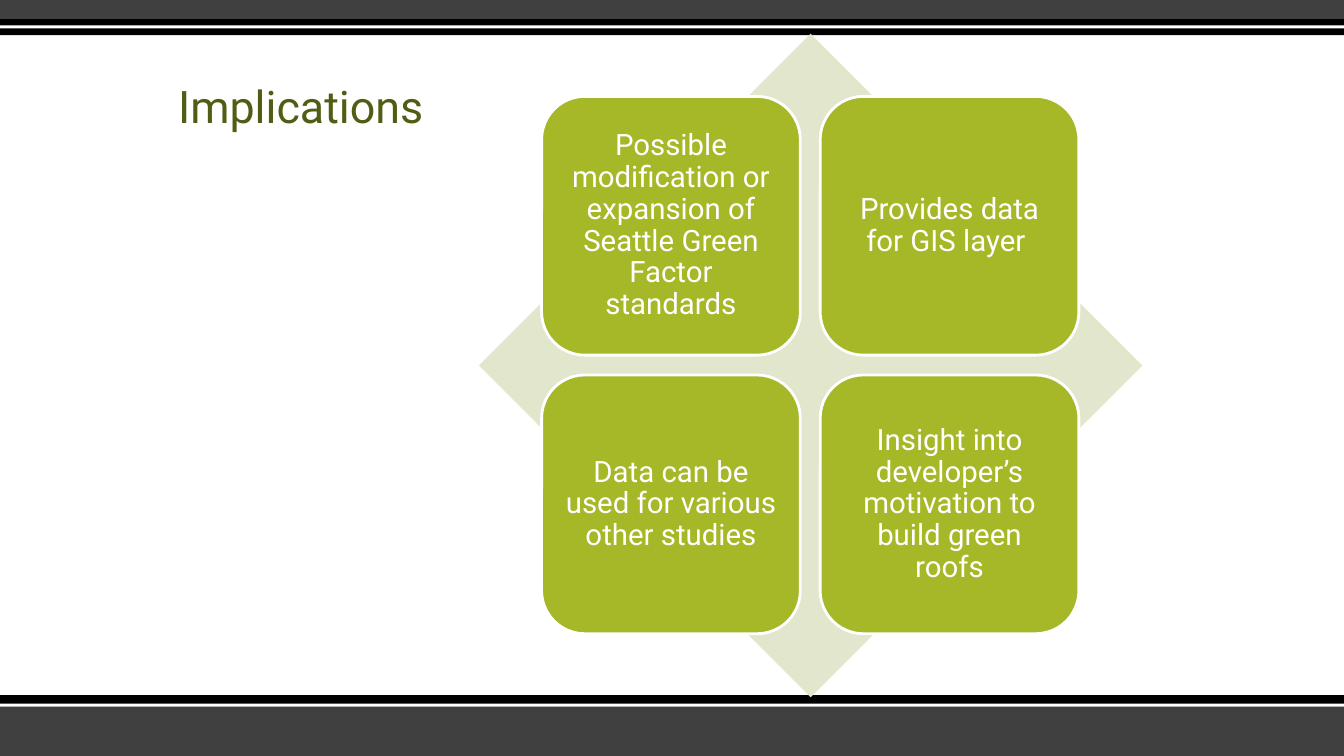
import pptx
import pptx.dml.color
import pptx.enum.shapes
import pptx.enum.text
import pptx.util
from pptx.util import Cm

SHAPES = pptx.enum.shapes.MSO_SHAPE
ANCHOR = pptx.enum.text.MSO_ANCHOR
SLIDE_WIDTH, SLIDE_HEIGHT = 33.87, 19.05

deck = pptx.Presentation()
deck.slide_width, deck.slide_height = Cm(SLIDE_WIDTH), Cm(SLIDE_HEIGHT)
slide = deck.slides.add_slide(deck.slide_layouts[6])


def add_filled(preset, left, top, width, height, color):
    shape = slide.shapes.add_shape(preset, Cm(left), Cm(top), Cm(width), Cm(height))
    shape.shadow.inherit = False
    shape.fill.solid()
    shape.fill.fore_color.rgb = pptx.dml.color.RGBColor.from_string(color)
    shape.line.fill.background()
    return shape


def write(paragraph, text, size, color):
    paragraph.line_spacing = 0.9
    run = paragraph.add_run()
    run.text = text
    run.font.name = "Roboto"
    run.font.size = pptx.util.Pt(size)
    run.font.color.rgb = pptx.dml.color.RGBColor.from_string(color)


# Bands across the bottom and top edges
for top, height, color in [
    (17.78, 1.27, "404040"),
    (17.52, 0.28, "000000"),
    (17.73, 0.08, "FFFFFF"),
    (0, 0.48, "404040"),
    (0.48, 0.41, "000000"),
    (0.64, 0.08, "FFFFFF"),
]:
    add_filled(SHAPES.RECTANGLE, 0, top, SLIDE_WIDTH, height, color)

# Title, with one line of room kept free beneath it
title = slide.shapes.add_textbox(Cm(4.24), Cm(1.7), Cm(25.4), Cm(2.97)).text_frame
title.word_wrap = True
title.vertical_anchor = ANCHOR.BOTTOM
title.margin_bottom = Cm(1.32)
write(title.paragraphs[0], "Implications", 32, "535C14")

# Four implications in a grid over a diamond
add_filled(SHAPES.DIAMOND, 12.07, 0.85, 16.72, 16.72, "E1E6CD")

GRID_LEFT, GRID_TOP = 13.65, 2.43
TILE, PITCH = 6.52, 7.02
implications = [
    "Possible modification or expansion of Seattle Green Factor standards",
    "Provides data for GIS layer ",
    "Data can be used for various other studies",
    "Insight into developer’s motivation to build green roofs",
]
for index, implication in enumerate(implications):
    row, column = divmod(index, 2)
    tile = add_filled(SHAPES.ROUNDED_RECTANGLE, GRID_LEFT + column * PITCH,
                      GRID_TOP + row * PITCH, TILE, TILE, "A6B727")
    tile.line.color.rgb = pptx.dml.color.RGBColor.from_string("FFFFFF")
    tile.line.width = pptx.util.Pt(2)
    frame = tile.text_frame
    frame.word_wrap = True
    frame.vertical_anchor = ANCHOR.MIDDLE
    frame.margin_left = frame.margin_right = Cm(0.23)
    frame.margin_top = frame.margin_bottom = Cm(0.23)
    frame.paragraphs[0].alignment = pptx.enum.text.PP_ALIGN.CENTER
    write(frame.paragraphs[0], implication, 21, "FFFFFF")

deck.save("out.pptx")
